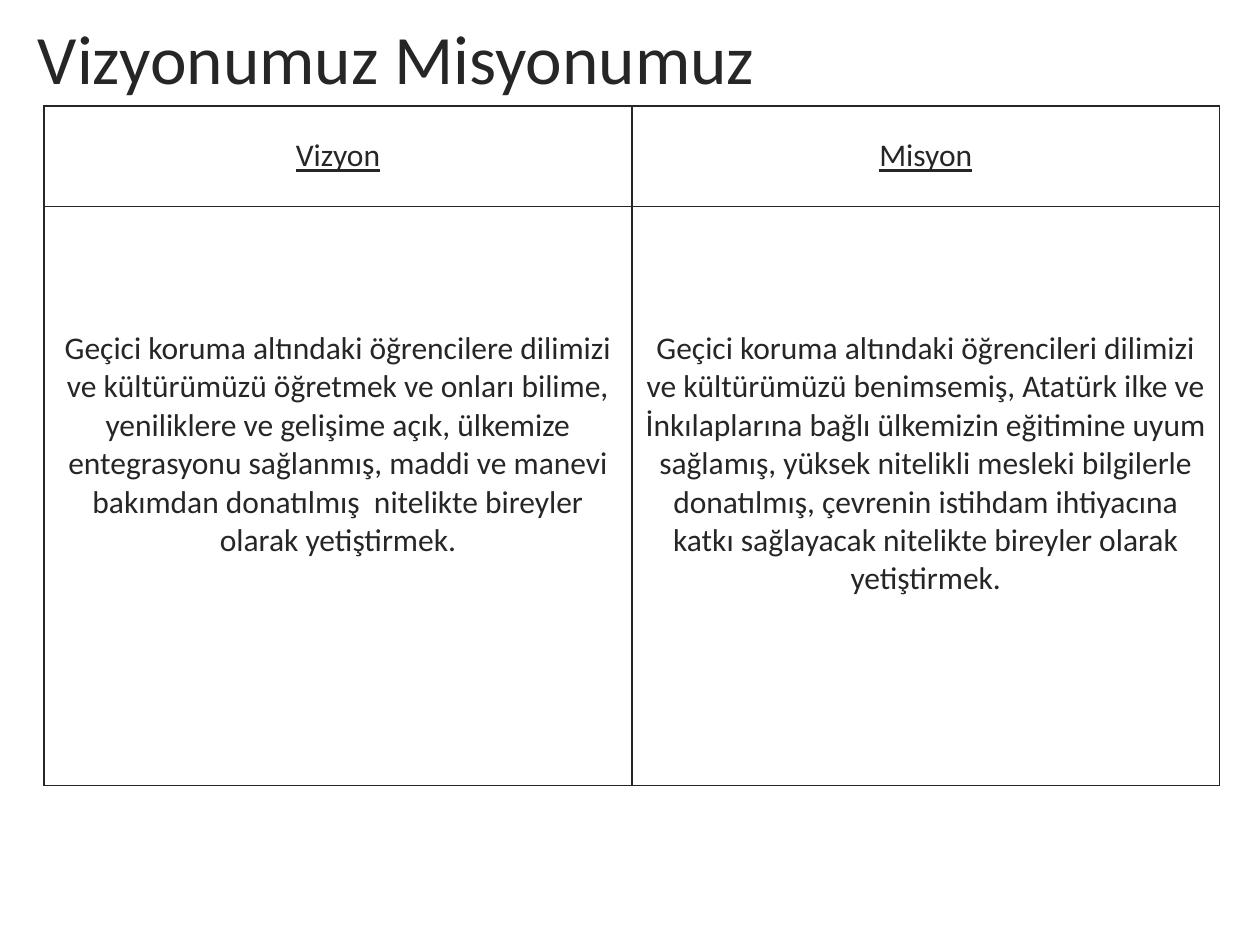
from dataclasses import dataclass

from lxml import etree
from pptx import Presentation
from pptx.dml.color import RGBColor
from pptx.enum.text import MSO_ANCHOR, MSO_AUTO_SIZE, PP_ALIGN
from pptx.oxml.ns import qn
from pptx.util import Inches, Pt

LEFT, CENTER = PP_ALIGN.LEFT, PP_ALIGN.CENTER
TOP, MIDDLE = MSO_ANCHOR.TOP, MSO_ANCHOR.MIDDLE
NO_FIT = MSO_AUTO_SIZE.NONE
TITLE_ONLY = 5


@dataclass(frozen=True)
class Theme:
    ink: str = "262626"
    paper: str = "FFFFFF"
    font: str = "Calibri"
    title_size: float = 39.6
    body_size: float = 18
    border: float = 1


def write(frame, text, *, theme, size, align=LEFT, underline=False):
    paragraph = frame.paragraphs[0]
    paragraph.alignment = align
    run = paragraph.add_run()
    run.text = text
    run.font.name = theme.font
    run.font.size = Pt(size)
    run.font.underline = underline
    run.font.color.rgb = RGBColor.from_string(theme.ink)


class Page:
    def __init__(self, deck, theme):
        self.theme = theme
        self.width, self.height = deck.slide_width, deck.slide_height
        self.slide = deck.slides.add_slide(deck.slide_layouts[TITLE_ONLY])

    def area(self, left, top, width, height):
        return (int(self.width * left), int(self.height * top),
                int(self.width * width), int(self.height * height))

    def title(self, text, box):
        heading = self.slide.shapes.title
        heading.left, heading.top, heading.width, heading.height = self.area(*box)
        frame = heading.text_frame
        frame.auto_size = NO_FIT
        frame.vertical_anchor = MIDDLE
        write(frame, text, theme=self.theme, size=self.theme.title_size)

    def outline(self, cell):
        properties = cell._tc.get_or_add_tcPr()
        for position, side in enumerate(("a:lnL", "a:lnR", "a:lnT", "a:lnB")):
            line = etree.Element(qn(side), w=str(Pt(self.theme.border)))
            fill = etree.SubElement(line, qn("a:solidFill"))
            etree.SubElement(fill, qn("a:srgbClr"), val=self.theme.ink)
            properties.insert(position, line)

    def statements(self, content, box, header_share, body_inset):
        left, top, width, height = self.area(*box)
        headings = list(content)
        table = self.slide.shapes.add_table(
            2, len(headings), left, top, width, height).table
        table.first_row = table.horz_banding = False
        table.rows[0].height = int(height * header_share)
        table.rows[1].height = height - table.rows[0].height
        for column, (heading, statement) in enumerate(content.items()):
            for row, text in enumerate((heading, statement)):
                is_heading = row == 0
                cell = table.cell(row, column)
                cell.fill.solid()
                cell.fill.fore_color.rgb = RGBColor.from_string(self.theme.paper)
                cell.vertical_anchor = MIDDLE if is_heading else TOP
                if not is_heading:
                    cell.margin_top = int(self.height * body_inset)
                write(cell.text_frame, text, theme=self.theme,
                      size=self.theme.body_size, align=CENTER,
                      underline=is_heading)
                self.outline(cell)


STATEMENTS = {
    "Vizyon": (
        "Geçici koruma altındaki öğrencilere dilimizi ve kültürümüzü öğretmek "
        "ve onları bilime, yeniliklere ve gelişime açık, ülkemize entegrasyonu "
        "sağlanmış, maddi ve manevi bakımdan donatılmış  nitelikte bireyler "
        "olarak yetiştirmek."),
    "Misyon": (
        "Geçici koruma altındaki öğrencileri dilimizi ve kültürümüzü benimsemiş, "
        "Atatürk ilke ve İnkılaplarına bağlı ülkemizin eğitimine uyum sağlamış, "
        "yüksek nitelikli mesleki bilgilerle donatılmış, çevrenin istihdam "
        "ihtiyacına katkı sağlayacak nitelikte bireyler olarak yetiştirmek."),
}


def main():
    deck = Presentation()
    deck.slide_width, deck.slide_height = Inches(10), Inches(7.5)
    page = Page(deck, Theme())
    page.title("Vizyonumuz Misyonumuz", (0.02, 0.01, 0.95, 0.1))
    page.statements(STATEMENTS, (0.035, 0.112, 0.933, 0.719),
                    header_share=0.148, body_inset=0.13)
    deck.save("out.pptx")


if __name__ == "__main__":
    main()
